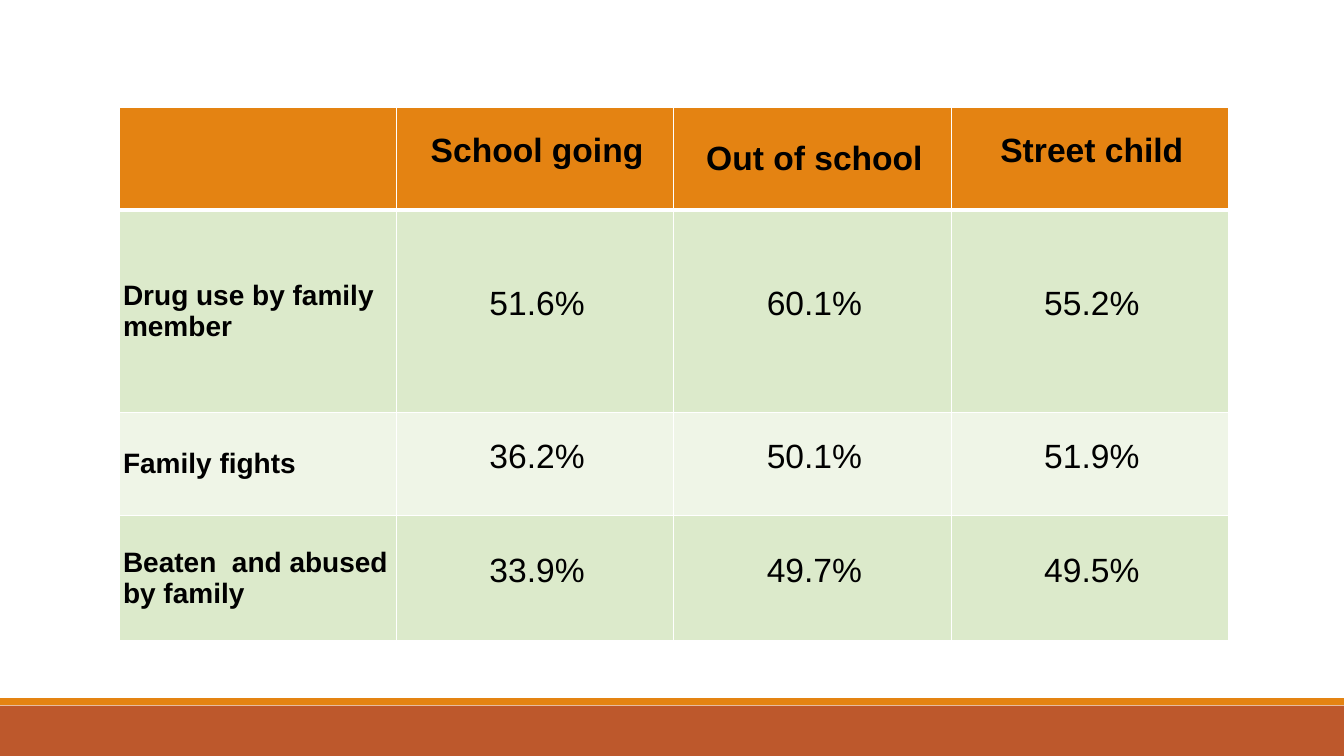
import pptx
import pptx.dml.color
import pptx.enum.shapes
import pptx.enum.text
import pptx.oxml.ns
import pptx.util
from lxml import etree

Cm, Pt = pptx.util.Cm, pptx.util.Pt
RGBColor = pptx.dml.color.RGBColor
ALIGN = pptx.enum.text.PP_ALIGN

GROUPS = ["", "School going", "Out of school", "Street child"]
FAMILY_PROBLEMS = [
    ("Drug use by family member", "51.6%", "60.1%", "55.2%"),
    ("Family fights", "36.2%", "50.1%", "51.9%"),
    ("Beaten  and abused by family", "33.9%", "49.7%", "49.5%"),
]
NATURAL_SPACING = "Out of school"

ORANGE = RGBColor(0xE4, 0x83, 0x12)
RUST = RGBColor(0xBD, 0x58, 0x2C)
GREEN = RGBColor(0xDC, 0xEA, 0xCB)
PALE_GREEN = RGBColor(0xEF, 0xF5, 0xE7)
BLACK = RGBColor(0, 0, 0)
WHITE = RGBColor(0xFF, 0xFF, 0xFF)

SLIDE_WIDTH, SLIDE_HEIGHT = Cm(33.87), Cm(19.05)
FOOTER_BANDS = [(17.78, 1.27, RUST), (17.59, 0.18, ORANGE)]
TABLE_LEFT, TABLE_TOP, COLUMN_WIDTH = Cm(3), Cm(2.7), Cm(6.99)
ROW_HEIGHTS = [Cm(2.59), Cm(5.11), Cm(2.59), Cm(3.15)]
ROW_FILLS = [ORANGE, GREEN, PALE_GREEN, GREEN]
CELL_FORMAT = {
    "margin_left": 0, "margin_right": 0, "margin_top": 0, "margin_bottom": 0,
    "vertical_anchor": pptx.enum.text.MSO_ANCHOR.MIDDLE,
}


def apply(target, values):
    for name, value in values.items():
        setattr(target, name, value)


def add_borders(cell, widths):
    properties = cell._tc.get_or_add_tcPr()
    for position, (side, points) in enumerate(widths.items()):
        border = etree.Element(pptx.oxml.ns.qn("a:ln" + side), w=str(Pt(points)))
        fill = etree.SubElement(border, pptx.oxml.ns.qn("a:solidFill"))
        etree.SubElement(fill, pptx.oxml.ns.qn("a:srgbClr"), val=str(WHITE))
        properties.insert(position, border)


def fill_cell(cell, wording, row, column):
    apply(cell, CELL_FORMAT)
    cell.fill.solid()
    cell.fill.fore_color.rgb = ROW_FILLS[row]
    add_borders(cell, {"L": 1, "R": 1, "T": 3 if row == 1 else 1, "B": 3 if row == 0 else 1})
    is_label = column == 0
    paragraph = cell.text_frame.paragraphs[0]
    paragraph.text = wording
    paragraph.alignment = ALIGN.LEFT if is_label else ALIGN.CENTER
    paragraph._p.get_or_add_pPr().set("marL", str(Cm(0.1)))
    if not is_label and wording != NATURAL_SPACING:
        paragraph.line_spacing = Pt(16)
    apply(paragraph.font, {
        "name": "Arial", "size": Pt(20 if is_label else 24), "bold": is_label or row == 0,
    })
    paragraph.font.color.rgb = BLACK


def main():
    deck = pptx.Presentation()
    apply(deck, {"slide_width": SLIDE_WIDTH, "slide_height": SLIDE_HEIGHT})
    slide = deck.slides.add_slide(deck.slide_layouts[6])

    for top, height, color in FOOTER_BANDS:
        band = slide.shapes.add_shape(
            pptx.enum.shapes.MSO_SHAPE.RECTANGLE, 0, Cm(top), SLIDE_WIDTH, Cm(height))
        band.shadow.inherit = False
        band.fill.solid()
        band.fill.fore_color.rgb = color
        band.line.fill.background()

    rows = [GROUPS, *FAMILY_PROBLEMS]
    survey = slide.shapes.add_table(
        len(rows), len(GROUPS), TABLE_LEFT, TABLE_TOP,
        COLUMN_WIDTH * len(GROUPS), sum(ROW_HEIGHTS)).table
    apply(survey, {"first_row": True, "horz_banding": False})
    for column in survey.columns:
        column.width = COLUMN_WIDTH
    for row, wordings in enumerate(rows):
        survey.rows[row].height = ROW_HEIGHTS[row]
        for column, wording in enumerate(wordings):
            fill_cell(survey.cell(row, column), wording, row, column)

    deck.save("out.pptx")


if __name__ == "__main__":
    main()
